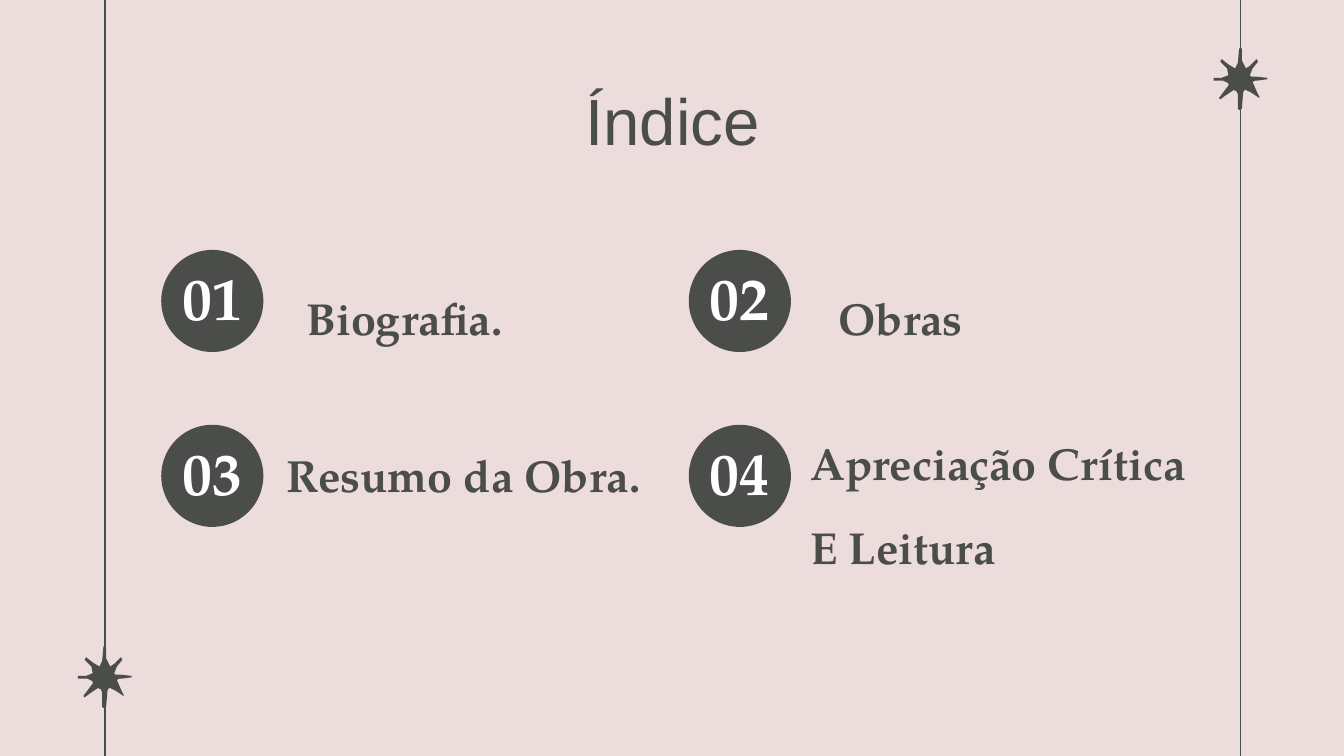
from lxml import etree
from pptx import Presentation
from pptx.dml.color import RGBColor
from pptx.enum.shapes import MSO_CONNECTOR, MSO_SHAPE
from pptx.enum.text import MSO_ANCHOR, PP_ALIGN
from pptx.oxml.ns import qn
from pptx.util import Pt

DARK = "4B4D4A"
SERIF = "TeX Gyre Pagella"
# Star outline, in hundredths of an inch from its top left corner
STAR = [
    (21, 0), (20, 0), (19, 11), (17, 15), (12, 12), (7, 8), (6, 10), (11, 15),
    (12, 20), (7, 22), (1, 22), (1, 24), (8, 24), (12, 26), (12, 28), (11, 29),
    (5, 37), (6, 38), (10, 35), (16, 31), (18, 32), (19, 34), (19, 39), (19, 45),
    (20, 46), (22, 45), (23, 33), (24, 31), (25, 31), (29, 33), (35, 37), (35, 36),
    (33, 32), (30, 25), (32, 24), (34, 24), (41, 23), (41, 22), (32, 21), (29, 21),
    (28, 20), (30, 15), (34, 10), (33, 8), (28, 13), (25, 15), (22, 9), (22, 0),
]


def paint(color_format, color):
    """Set a fill's, line's or font's colour from a hex string."""
    color_format.rgb = RGBColor.from_string(color)


def write(shape, lines, size, font, color, bold, anchor, align):
    """Fill a text shape with one paragraph per line."""
    frame = shape.text_frame
    frame.word_wrap = True
    frame.vertical_anchor = anchor
    frame.margin_left = frame.margin_right = Pt(7.2)
    frame.margin_top = frame.margin_bottom = Pt(7.2)
    for index, line in enumerate(lines):
        paragraph = frame.add_paragraph() if index else frame.paragraphs[0]
        paragraph.alignment = align
        if anchor == MSO_ANCHOR.BOTTOM:
            paragraph.line_spacing = 1.15
            paragraph.space_after = Pt(12)
        run = paragraph.add_run()
        run.text = line
        run.font.size = Pt(size)
        run.font.name = font
        run.font.bold = bold
        paint(run.font.color, color)


presentation = Presentation()
presentation.slide_width = Pt(720)
presentation.slide_height = Pt(405)
slide = presentation.slides.add_slide(presentation.slide_layouts[5])
shapes = slide.shapes
slide.background.fill.solid()
paint(slide.background.fill.fore_color, "ECDCDC")

# Side lines, each with a star
for line_x, star_top in [(56.16, 346.3), (664.56, 25.9)]:
    line = shapes.add_connector(
        MSO_CONNECTOR.STRAIGHT, Pt(line_x), Pt(0), Pt(line_x), Pt(405))
    line.line.width = Pt(0.75)
    paint(line.line.color, DARK)
    etree.SubElement(line._element.spPr, qn("a:effectLst"))

    builder = shapes.build_freeform(*STAR[0], scale=Pt(0.72))
    builder.add_line_segments(STAR[1:], close=True)
    star = builder.convert_to_shape(Pt(line_x - 15.1), Pt(star_top))
    star.shadow.inherit = False
    star.fill.solid()
    paint(star.fill.fore_color, DARK)
    star.line.fill.background()

# Numbered entries in a two by two grid: lines, then left, top, width, height
entries = [
    (["Biografia."], 157, 160.6, 194.4, 31),
    (["Obras"], 442.1, 160.6, 194.4, 31),
    (["Resumo da Obra."], 146.2, 244.8, 219.6, 31),
    (["Apreciação Crítica", "E Leitura"], 427, 259.9, 259.9, 54.7),
]
for index, (lines, left, top, width, height) in enumerate(entries):
    row, column = divmod(index, 2)
    circle_left = 86.4 + column * 282.6
    circle_top = 133.9 + row * 93.7
    circle = shapes.add_shape(
        MSO_SHAPE.OVAL, Pt(circle_left), Pt(circle_top), Pt(54.7), Pt(54.7))
    circle.shadow.inherit = False
    circle.fill.solid()
    paint(circle.fill.fore_color, DARK)
    circle.line.fill.background()

    number = shapes.add_textbox(
        Pt(circle_left), Pt(circle_top + 6.8), Pt(54.7), Pt(36.7))
    write(number, [f"{index + 1:02}"], 32, SERIF, "FFFFFF", True,
          MSO_ANCHOR.MIDDLE, PP_ALIGN.CENTER)

    label = shapes.add_textbox(Pt(left), Pt(top), Pt(width), Pt(height))
    write(label, lines, 24, SERIF, DARK, True, MSO_ANCHOR.BOTTOM, PP_ALIGN.LEFT)

title = shapes.title
title.left, title.top, title.width, title.height = Pt(56.9), Pt(36), Pt(607), Pt(45.4)
write(title, ["Índice"], 35, "Arial", DARK, False, MSO_ANCHOR.TOP, PP_ALIGN.CENTER)

presentation.save("out.pptx")
